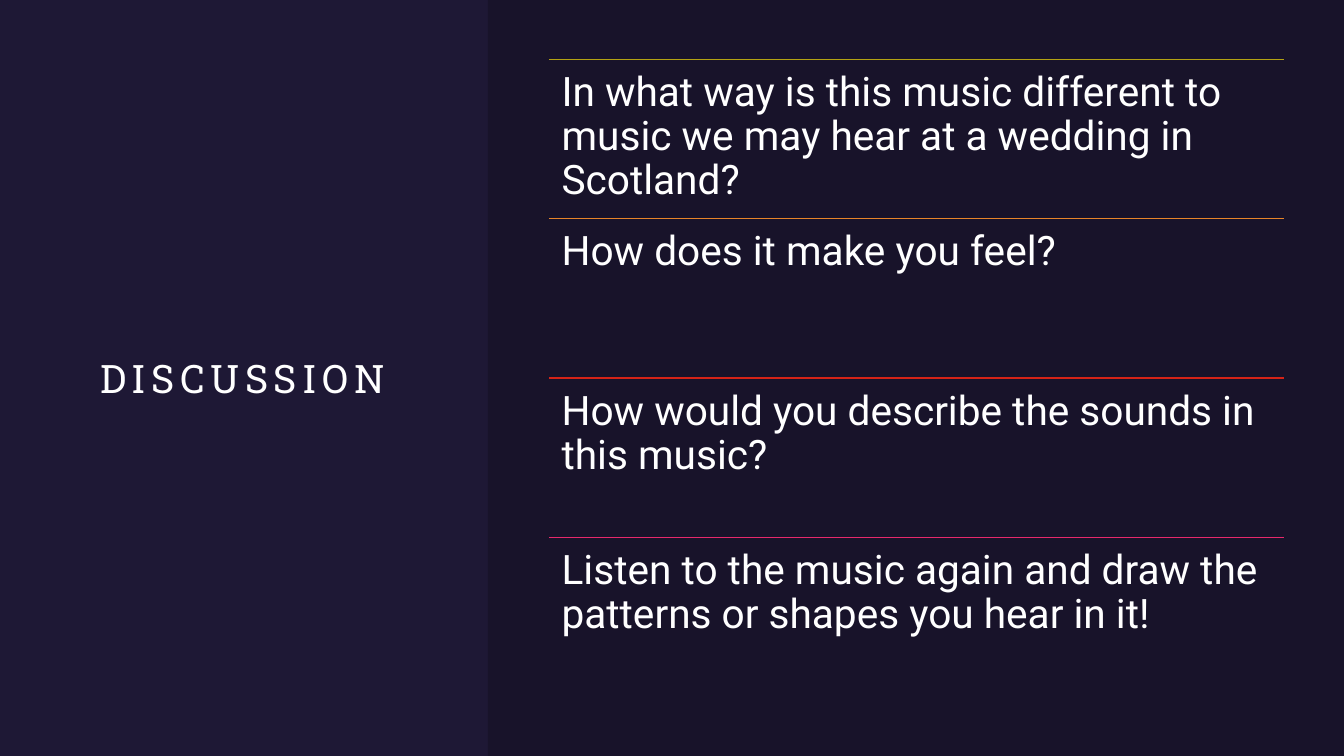
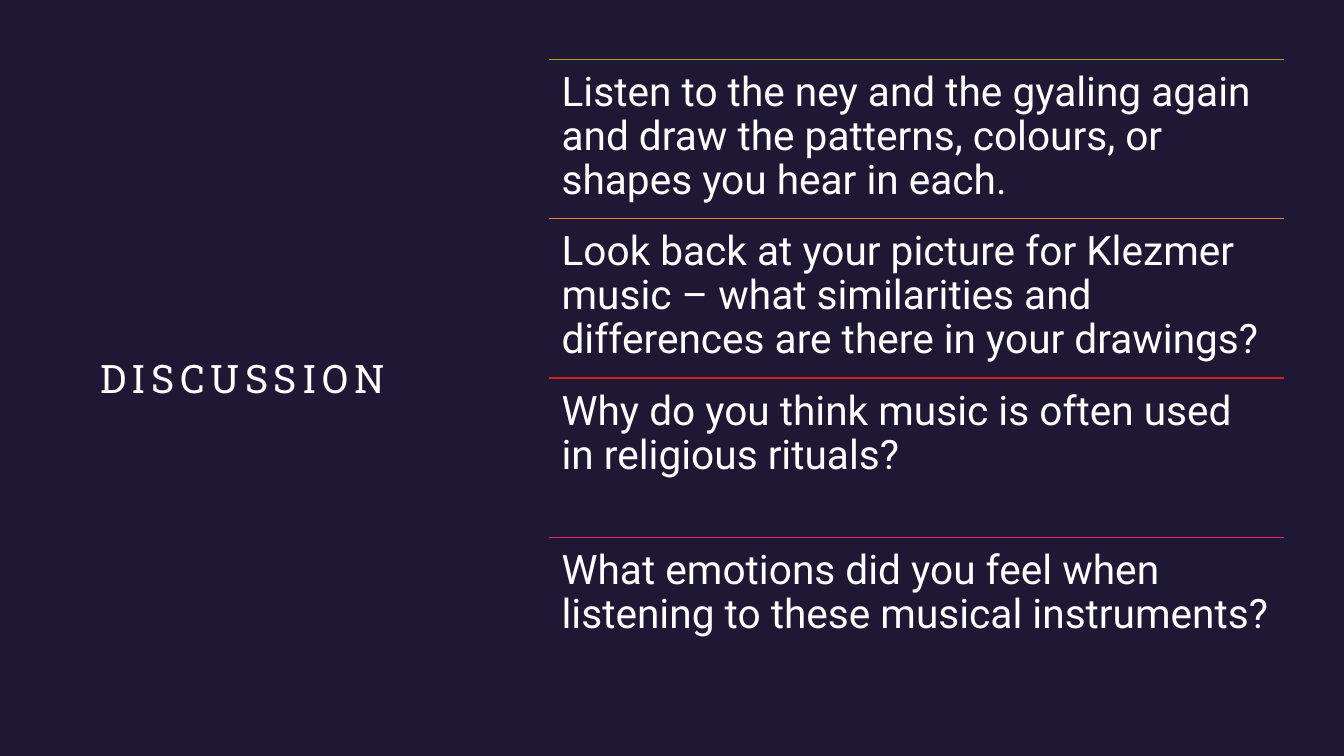
from dataclasses import dataclass
from typing import Any

from lxml.etree import SubElement as sub
from pptx import Presentation
from pptx.dml.color import RGBColor as RGB
from pptx.enum.shapes import MSO_CONNECTOR as CONN, MSO_SHAPE as SHAPE
from pptx.enum.text import MSO_ANCHOR as ANCHOR, MSO_AUTO_SIZE as AUTO, PP_ALIGN as ALIGN
from pptx.oxml.ns import qn
from pptx.util import Pt

WIDE, HIGH = 960, 540
EDGE = 42.5
PANEL = 348.5
LEFT, SPAN = 392.5, 525
PAD = 8.64
BACK, SHADE, INK = "1E1835", "000000", "FFFFFF"
RULES = ("B3A213", "E78429", "D52317", "E7296C")
STEP = (HIGH - 2 * EDGE) / len(RULES)


def tint(code: str) -> RGB:
    return RGB.from_string(code)


def apply(item: Any, style: dict[str, Any]) -> None:
    for name, value in style.items():
        setattr(item, name, value)


def frame(inset: float, anchor: ANCHOR) -> dict[str, Any]:
    sides = {f"margin_{side}": Pt(inset) for side in ("left", "top", "right", "bottom")}
    return sides | {"word_wrap": True, "auto_size": AUTO.NONE, "vertical_anchor": anchor}


HEAD_BOX = dict(left=Pt(EDGE), top=Pt(85), width=Pt(261.5), height=Pt(370))
HEAD_FRAME = frame(0, ANCHOR.MIDDLE)
HEAD_PARA = dict(alignment=ALIGN.CENTER)
HEAD_FONT = dict(name="Roboto Slab", size=Pt(28))
ROW_FRAME = frame(PAD, ANCHOR.TOP)
ROW_PARA = dict(alignment=ALIGN.LEFT, line_spacing=0.9)
ROW_FONT = dict(name="Roboto", size=Pt(29))


@dataclass(frozen=True)
class Page:
    title: str
    asks: tuple[str, ...]
    panel: bool = False


PAGES = (
    Page("DISCUSSION", (
        "In what way is this music different to music we may hear at a wedding in Scotland?",
        "How does it make you feel?",
        "How would you describe the sounds in this music?",
        "Listen to the music again and draw the patterns or shapes you hear in it!",
    ), panel=True),
    Page("DISCUSSION", (
        "Listen to the ney and the gyaling again and draw the patterns, colours, "
        "or shapes you hear in each.",
        "Look back at your picture for Klezmer music – what similarities and "
        "differences are there in your drawings?",
        "Why do you think music is often used in religious rituals?",
        "What emotions did you feel when listening to these musical instruments?",
    )),
)


def write(shape: Any, text: str, box: dict, para: dict, font: dict) -> Any:
    """Fill a shape with one styled run and return that run."""
    apply(shape.text_frame, box)
    line = shape.text_frame.paragraphs[0]
    apply(line, para)
    run = line.add_run()
    run.text = text
    apply(run.font, font)
    run.font.color.rgb = tint(INK)
    return run


def add_head(slide: Any, text: str) -> None:
    head = slide.shapes.title
    apply(head, HEAD_BOX)
    run = write(head, text, HEAD_FRAME, HEAD_PARA, HEAD_FONT)
    run.font.element.set("spc", "400") if hasattr(run.font, "element") else \
        run._r.get_or_add_rPr().set("spc", "400")


def add_panel(slide: Any) -> None:
    """Darken the right side with a sheer black cover."""
    panel = slide.shapes.add_shape(SHAPE.RECTANGLE, Pt(PANEL), 0, Pt(WIDE - PANEL), Pt(HIGH))
    panel.shadow.inherit = False
    panel.fill.solid()
    panel.fill.fore_color.rgb = tint(SHADE)
    panel.line.fill.background()
    color = panel.element.spPr.find(".//" + qn("a:srgbClr"))
    sub(color, qn("a:alpha")).set("val", "20000")


def add_row(shapes: Any, top: float, text: str, color: str) -> None:
    rule = shapes.add_connector(CONN.STRAIGHT, Pt(LEFT), Pt(top), Pt(LEFT + SPAN), Pt(top))
    rule.line.color.rgb = tint(color)
    rule.line.width = Pt(0.75)
    sub(rule.element.spPr, qn("a:effectLst"))
    box = shapes.add_textbox(Pt(LEFT), Pt(top), Pt(SPAN), Pt(STEP))
    write(box, text, ROW_FRAME, ROW_PARA, ROW_FONT)


def add_page(deck: Any, page: Page) -> None:
    slide = deck.slides.add_slide(deck.slide_layouts.get_by_name("Title Only"))
    add_head(slide, page.title)
    if page.panel:
        add_panel(slide)
    group = slide.shapes.add_group_shape()
    for i, (text, color) in enumerate(zip(page.asks, RULES)):
        add_row(group.shapes, EDGE + i * STEP, text, color)


def main() -> None:
    deck = Presentation()
    apply(deck, dict(slide_width=Pt(WIDE), slide_height=Pt(HIGH)))
    back = deck.slide_master.background.fill
    back.solid()
    back.fore_color.rgb = tint(BACK)
    for page in PAGES:
        add_page(deck, page)
    deck.save("out.pptx")


if __name__ == "__main__":
    main()
